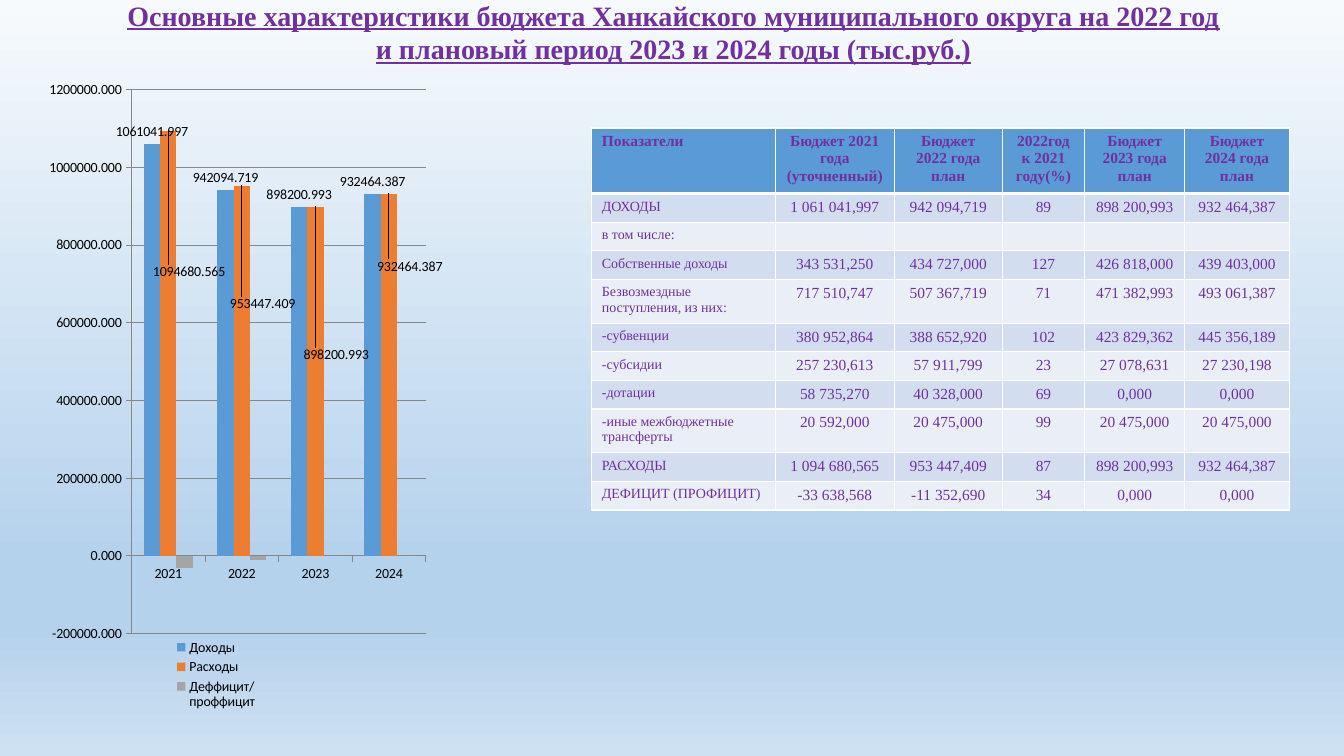
import pptx
import pptx.chart.data
import pptx.dml.color
import pptx.enum.chart
import pptx.enum.text
import pptx.oxml.ns
import pptx.util
from lxml import etree

Inches = pptx.util.Inches
Pt = pptx.util.Pt
qn = pptx.oxml.ns.qn
ALIGN = pptx.enum.text.PP_ALIGN

TITLE = ("Основные характеристики бюджета Ханкайского муниципального округа на 2022 год\n"
         "и плановый период 2023 и 2024 годы (тыс.руб.)")
COLUMN_WIDTHS = [1.82, 1.18, 1.07, 0.82, 0.99, 1.04]
BUDGET_ROWS = [
    ["Показатели", "Бюджет 2021 года (уточненный)", "Бюджет 2022 года план",
     "2022год к 2021\nгоду(%)", "Бюджет 2023 года план", "Бюджет 2024 года\nплан"],
    ["ДОХОДЫ", "1 061 041,997", "942 094,719", "89", "898 200,993", "932 464,387"],
    ["в том числе:", "", "", "", "", ""],
    ["Собственные доходы", "343 531,250", "434 727,000", "127", "426 818,000", "439 403,000"],
    ["Безвозмездные поступления, из них:", "717 510,747", "507 367,719", "71",
     "471 382,993", "493 061,387"],
    ["-субвенции", "380 952,864", "388 652,920", "102", "423 829,362", "445 356,189"],
    ["-субсидии", "257 230,613", "57 911,799", "23", "27 078,631", "27 230,198"],
    ["-дотации", "58 735,270", "40 328,000", "69", "0,000", "0,000"],
    ["-иные межбюджетные трансферты", "20 592,000", "20 475,000", "99",
     "20 475,000", "20 475,000"],
    ["РАСХОДЫ", "1 094 680,565", "953 447,409", "87", "898 200,993", "932 464,387"],
    ["ДЕФИЦИТ (ПРОФИЦИТ)", "-33 638,568", "-11 352,690", "34", "0,000", "0,000"],
]
ROW_HEIGHTS = {0: 0.55, 4: 0.37}
YEARS = ["2021", "2022", "2023", "2024"]
SERIES = [
    ("Доходы", "5B9BD5", [1061041.997, 942094.719, 898200.993, 932464.387]),
    ("Расходы", "ED7D31", [1094680.565, 953447.409, 898200.993, 932464.387]),
    ("Деффицит/проффицит", "A5A5A5", [-30000, -10000, 0, 0]),
]
EXPENSE_LABEL_SHIFTS = [(0.04, 0.235), (0.04, 0.2), (0.04, 0.245), (0.04, 0.13)]


def color(value):
    return pptx.dml.color.RGBColor.from_string(value)


def write_text(frame, text, size, align=ALIGN.LEFT, font="Times New Roman",
               fill="7030A0", bold=False, underline=False):
    """Put each line of the text in its own formatted paragraph."""
    for index, line in enumerate(text.split("\n")):
        paragraph = frame.paragraphs[0] if index == 0 else frame.add_paragraph()
        paragraph.alignment = align
        if not line:
            etree.SubElement(paragraph._p, qn("a:endParaRPr"), sz=str(size * 100))
            continue
        run = paragraph.add_run()
        run.text = line
        run.font.name = font
        run.font.size = Pt(size)
        run.font.bold = bold
        run.font.underline = underline
        run.font.color.rgb = color(fill)


def manual_layout(x, y, width=None, height=None, inner=False, edge=True):
    """Return a c:layout element; without edge, x and y are shifts."""
    layout = etree.Element(qn("c:layout"))
    manual = etree.SubElement(layout, qn("c:manualLayout"))
    settings = []
    if inner:
        settings.append(("layoutTarget", "inner"))
    if edge:
        settings += [("xMode", "edge"), ("yMode", "edge")]
    settings += [("x", x), ("y", y)]
    if width is not None:
        settings += [("w", width), ("h", height)]
    for tag, value in settings:
        etree.SubElement(manual, qn("c:" + tag), val=str(value))
    return layout


def set_layout(parent, layout, after=None):
    for old in parent.findall(qn("c:layout")):
        parent.remove(old)
    position = 0 if after is None else parent.index(parent.find(qn(after))) + 1
    parent.insert(position, layout)


class BudgetSlide:
    line_color = "878787"
    header_fill = "5B9BD5"
    band_fills = ["EAEFF7", "D2DEEF"]

    def __init__(self, presentation):
        self.slide = presentation.slides.add_slide(presentation.slide_layouts[6])

    def background(self, stops):
        fill = self.slide.background.fill
        fill.gradient()
        fill.gradient_angle = 270
        stop_list = self.slide._element.find(".//" + qn("a:gsLst"))
        for old in list(stop_list):
            stop_list.remove(old)
        for percent, value in stops:
            stop = etree.SubElement(stop_list, qn("a:gs"), pos=str(percent * 1000))
            etree.SubElement(stop, qn("a:srgbClr"), val=value)

    def title(self, text, left, top, width, height):
        box = self.slide.shapes.add_textbox(Inches(left), Inches(top), Inches(width), Inches(height))
        box.text_frame.word_wrap = True
        box.text_frame.vertical_anchor = pptx.enum.text.MSO_ANCHOR.MIDDLE
        write_text(box.text_frame, text, 20, ALIGN.CENTER, bold=True, underline=True)

    def cell_borders(self, cell, header):
        properties = cell._tc.get_or_add_tcPr()
        for index, side in enumerate(["lnL", "lnR", "lnT", "lnB"]):
            width = Pt(3) if header and side == "lnB" else Pt(1)
            line = etree.Element(qn("a:" + side), w=str(int(width)))
            solid = etree.SubElement(line, qn("a:solidFill"))
            etree.SubElement(solid, qn("a:srgbClr"), val="FFFFFF")
            properties.insert(index, line)

    def table(self, rows, left, top, width, height):
        table = self.slide.shapes.add_table(
            len(rows), len(COLUMN_WIDTHS), Inches(left), Inches(top),
            Inches(width), Inches(height)).table
        for column, column_width in zip(table.columns, COLUMN_WIDTHS):
            column.width = Inches(column_width)
        for row_index, texts in enumerate(rows):
            table.rows[row_index].height = Inches(ROW_HEIGHTS.get(row_index, 0.24))
            header = row_index == 0
            for column_index, text in enumerate(texts):
                cell = table.cell(row_index, column_index)
                cell.fill.solid()
                cell.fill.fore_color.rgb = color(
                    self.header_fill if header else self.band_fills[row_index % 2])
                self.cell_borders(cell, header)
                first = column_index == 0
                write_text(cell.text_frame, text, 10 if first and not header else 11,
                           ALIGN.LEFT if first else ALIGN.CENTER, bold=header)

    def chart(self, left, top, width, height):
        data = pptx.chart.data.CategoryChartData(number_format="0.000")
        data.categories = YEARS
        for name, _, values in SERIES:
            data.add_series(name, values)
        chart = self.slide.shapes.add_chart(
            pptx.enum.chart.XL_CHART_TYPE.COLUMN_CLUSTERED, Inches(left), Inches(top),
            Inches(width), Inches(height), data).chart
        chart.has_title = False
        chart.font.name = "Calibri"
        chart.font.size = Pt(10)
        chart.font.color.rgb = color("000000")
        plot = chart.plots[0]
        plot.gap_width = 150
        plot.overlap = 0
        plot.vary_by_categories = False
        set_layout(chart._chartSpace.chart.plotArea,
                   manual_layout(0.152, 0.028, 0.567, 0.834, inner=True))
        self.axes(chart)
        for series, (_, fill, _) in zip(plot.series, SERIES):
            series.format.fill.solid()
            series.format.fill.fore_color.rgb = color(fill)
            series.invert_if_negative = False
        self.value_labels(plot.series)
        chart.has_legend = True
        chart.legend.position = pptx.enum.chart.XL_LEGEND_POSITION.RIGHT
        chart.legend.include_in_layout = False
        set_layout(chart.legend._element, manual_layout(0.22, 0.865, 0.19, 0.12),
                   after="c:legendPos")

    def axes(self, chart):
        values = chart.value_axis
        values.minimum_scale, values.maximum_scale = -200000, 1200000
        values.major_unit = 200000
        values.has_major_gridlines = True
        values.tick_labels.number_format = "0.000"
        values.tick_labels.number_format_is_linked = False
        for axis in (chart.category_axis, values):
            axis.major_tick_mark = pptx.enum.chart.XL_TICK_MARK.OUTSIDE
        for part in (chart.category_axis, values, values.major_gridlines):
            part.format.line.color.rgb = color(self.line_color)
            part.format.line.width = Pt(0.75)

    def value_labels(self, all_series):
        outside = pptx.enum.chart.XL_LABEL_POSITION.OUTSIDE_END
        income, expenses = all_series[0], all_series[1]
        for series in (income, expenses):
            series.data_labels.show_value = True
            series.data_labels.position = outside
        for index, (x, y) in enumerate(EXPENSE_LABEL_SHIFTS):
            expenses.points[index].data_label.position = outside
        label_elements = expenses._element.findall(".//" + qn("c:dLbl"))
        for element, (x, y) in zip(label_elements, EXPENSE_LABEL_SHIFTS):
            set_layout(element, manual_layout(x, y, edge=False), after="c:idx")


def main():
    presentation = pptx.Presentation()
    presentation.slide_width = Inches(13.33)
    presentation.slide_height = Inches(7.5)
    budget = BudgetSlide(presentation)
    budget.background([(0, "F7FAFD"), (74, "B5D2EC"), (83, "B5D2EC"), (100, "CEE1F2")])
    budget.title(TITLE, 0.59, -0.07, 12.18, 0.77)
    budget.table(BUDGET_ROWS, 5.87, 1.27, 6.9, 3.78)
    budget.chart(0.49, 0.71, 5.18, 6.47)
    presentation.save("out.pptx")


if __name__ == "__main__":
    main()
